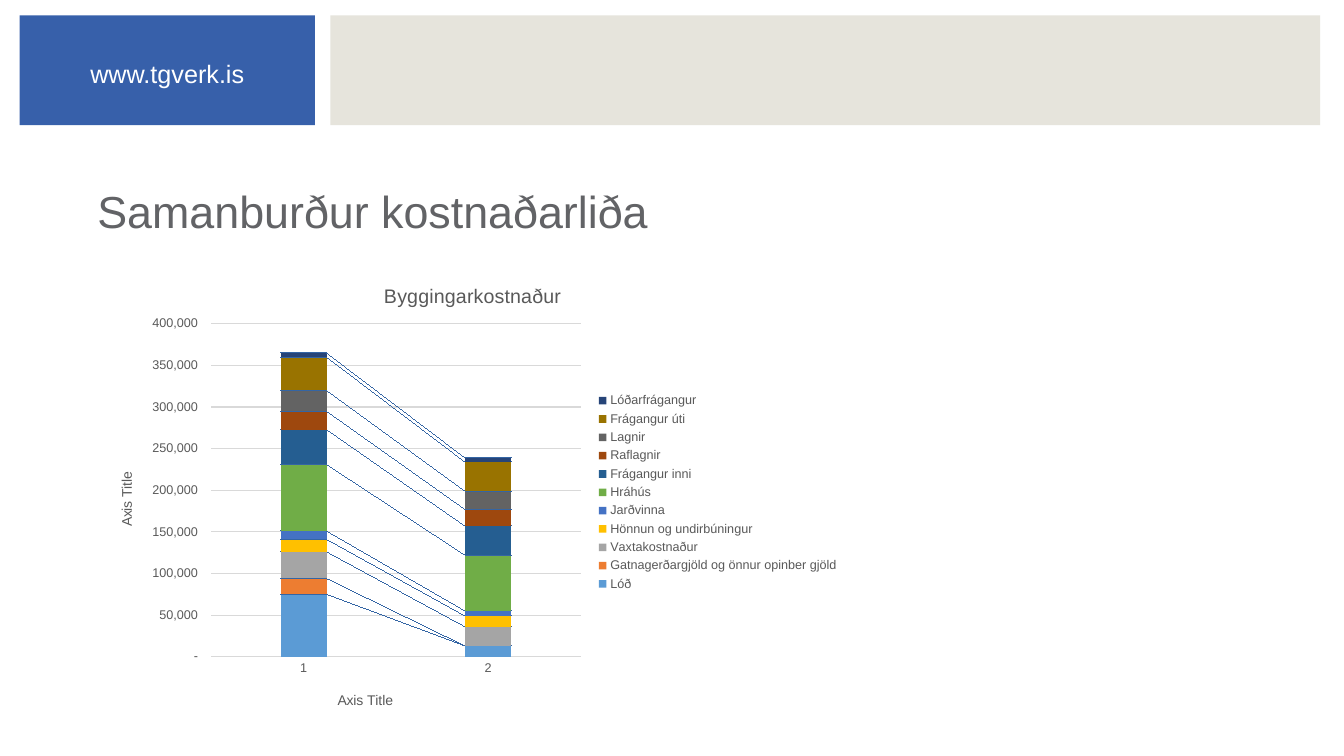
from lxml import etree
from pptx import Presentation
from pptx.chart.data import CategoryChartData
from pptx.dml.color import RGBColor
from pptx.enum.chart import XL_CHART_TYPE, XL_LEGEND_POSITION, XL_TICK_MARK
from pptx.enum.shapes import MSO_SHAPE
from pptx.enum.text import MSO_ANCHOR, PP_ALIGN
from pptx.oxml import parse_xml
from pptx.oxml.ns import nsdecls, qn
from pptx.util import Pt

FONT = "Arial"
COLORS = {
    "brand": "3760AA", "band": "E6E4DC", "white": "FFFFFF", "title": "626366",
    "label": "595959", "grid": "D9D9D9", "series_line": "264478",
}
NUMBER_FORMAT = '_(* #,##0_);_(* \\(#,##0\\);_(* "-"_);_(@_)'
COSTS = [
    ("Lóð", (75000, 13000), "5B9BD5"),
    ("Gatnagerðargjöld og önnur opinber gjöld", (19000, 0), "ED7D31"),
    ("Vaxtakostnaður", (32000, 23000), "A5A5A5"),
    ("Hönnun og undirbúningur", (15000, 13000), "FFC000"),
    ("Jarðvinna", (10000, 6000), "4472C4"),
    ("Hráhús", (80000, 67000), "70AD47"),
    ("Frágangur inni", (42000, 35000), "255E91"),
    ("Raflagnir", (22000, 20000), "9E480E"),
    ("Lagnir", (25000, 22000), "636363"),
    ("Frágangur úti", (40000, 35000), "997300"),
    ("Lóðarfrágangur", (5000, 5000), "264478"),
]


def rgb(name):
    return RGBColor.from_string(COLORS.get(name, name))


def style_font(font, size, color):
    font.name, font.size, font.bold = FONT, Pt(size), False
    font.color.rgb = rgb(color)


def add_rect(s, left, top, width, height, color):
    sp = s.shapes.add_shape(MSO_SHAPE.RECTANGLE, Pt(left), Pt(top), Pt(width), Pt(height))
    sp.shadow.inherit = False
    sp.fill.solid()
    sp.fill.fore_color.rgb = rgb(color)
    sp.line.fill.background()


def add_text(s, box, text, size, color, align, anchor):
    tf = s.shapes.add_textbox(*map(Pt, box)).text_frame
    tf.word_wrap = True
    tf.vertical_anchor = anchor
    tf.margin_left = tf.margin_right = tf.margin_top = tf.margin_bottom = Pt(3.6)
    tf.text = text
    p = tf.paragraphs[0]
    p.alignment, p.line_spacing = align, 0.9
    style_font(p.runs[0].font, size, color)


def add_header(s, left, top, width, height):
    """Blue address block, a gap, and a beige band filling the rest."""
    block, gap = 211, 11
    add_rect(s, left + block + gap, top, width - block - gap, height, "band")
    add_rect(s, left, top, block, height, "brand")
    add_text(s, (left + 3, top + 29, block - 6, 27), "www.tgverk.is", 18, "white",
             PP_ALIGN.CENTER, MSO_ANCHOR.MIDDLE)


def place(element, x, y, w=None, h=None):
    """Fix a chart part at fractions of the chart area."""
    for old in element.findall(qn("c:layout")):
        element.remove(old)
    layout = parse_xml(f"<c:layout {nsdecls('c')}><c:manualLayout/></c:layout>")
    values = {"xMode": "edge", "yMode": "edge", "x": x, "y": y}
    if w:
        values.update(w=w, h=h)
        if element.tag == qn("c:plotArea"):
            values = {"layoutTarget": "inner", **values}
    for tag, value in values.items():
        etree.SubElement(layout[0], qn(f"c:{tag}")).set("val", str(value))
    overlay = element.find(qn("c:overlay"))
    if overlay is None:
        element.insert(0, layout)
    else:
        overlay.addprevious(layout)


def set_title(title, text, size, x, y):
    tf = title.text_frame
    tf.text = text
    style_font(tf.paragraphs[0].runs[0].font, size, "label")
    place(title._element, x, y)


def add_series_lines(plot_element):
    lines = parse_xml(
        f"<c:serLines {nsdecls('c', 'a')}><c:spPr><a:ln w=\"9525\"><a:solidFill>"
        f"<a:srgbClr val=\"{COLORS['series_line']}\"/></a:solidFill></a:ln></c:spPr></c:serLines>")
    plot_element.find(qn("c:overlap")).addnext(lines)


def style_axes(chart):
    cat, val = chart.category_axis, chart.value_axis
    for axis in (cat, val):
        style_font(axis.tick_labels.font, 9, "label")
    cat.major_tick_mark = XL_TICK_MARK.NONE
    cat.format.line.color.rgb = rgb("grid")
    cat.format.line.width = Pt(0.75)
    set_title(cat.axis_title, "Axis Title", 10, 0.32, 0.92)

    val.minimum_scale, val.maximum_scale, val.major_unit = 0, 400000, 50000
    val.major_tick_mark = XL_TICK_MARK.OUTSIDE
    val.format.line.fill.background()
    val.major_gridlines.format.line.color.rgb = rgb("grid")
    val.major_gridlines.format.line.width = Pt(0.75)
    val.tick_labels.number_format = NUMBER_FORMAT
    val.tick_labels.number_format_is_linked = False
    set_title(val.axis_title, "Axis Title", 10, 0.03, 0.45)
    body = val.axis_title.text_frame._txBody.find(qn("a:bodyPr"))
    body.set("rot", "-5400000")
    body.set("vert", "horz")


def add_cost_chart(s, left, top, width, height):
    data = CategoryChartData()
    data.categories = ["1", "2"]
    for name, values, _ in COSTS:
        data.add_series(name, values)
    chart = s.shapes.add_chart(XL_CHART_TYPE.COLUMN_STACKED, Pt(left), Pt(top),
                               Pt(width), Pt(height), data).chart
    style_font(chart.font, 10, "label")
    chart.has_title = True
    set_title(chart.chart_title, "Byggingarkostnaður", 14, 0.38, 0.045)

    plot = chart.plots[0]
    plot.gap_width, plot.overlap, plot.vary_by_categories = 300, 100, False
    for series, (_, _, color) in zip(plot.series, COSTS):
        series.format.fill.solid()
        series.format.fill.fore_color.rgb = rgb(color)
    add_series_lines(plot._element)
    style_axes(chart)
    place(chart._chartSpace.chart.plotArea, 0.157, 0.139, 0.487, 0.713)

    chart.has_legend = True
    legend = chart.legend
    legend.position = XL_LEGEND_POSITION.RIGHT
    legend.include_in_layout = False
    style_font(legend.font, 9, "label")
    place(legend._element, 0.66, 0.28, 0.33, 0.44)


def main():
    prs = Presentation()
    prs.slide_width, prs.slide_height = Pt(960), Pt(540)
    s = prs.slides.add_slide(prs.slide_layouts[6])
    add_header(s, 14, 11, 929, 78.5)
    add_text(s, (66, 110, 828, 63.5), "Samanburður kostnaðarliða", 32, "title",
             PP_ALIGN.LEFT, MSO_ANCHOR.BOTTOM)
    add_cost_chart(s, 66, 185, 541.5, 333.5)
    prs.save("out.pptx")


if __name__ == "__main__":
    main()
